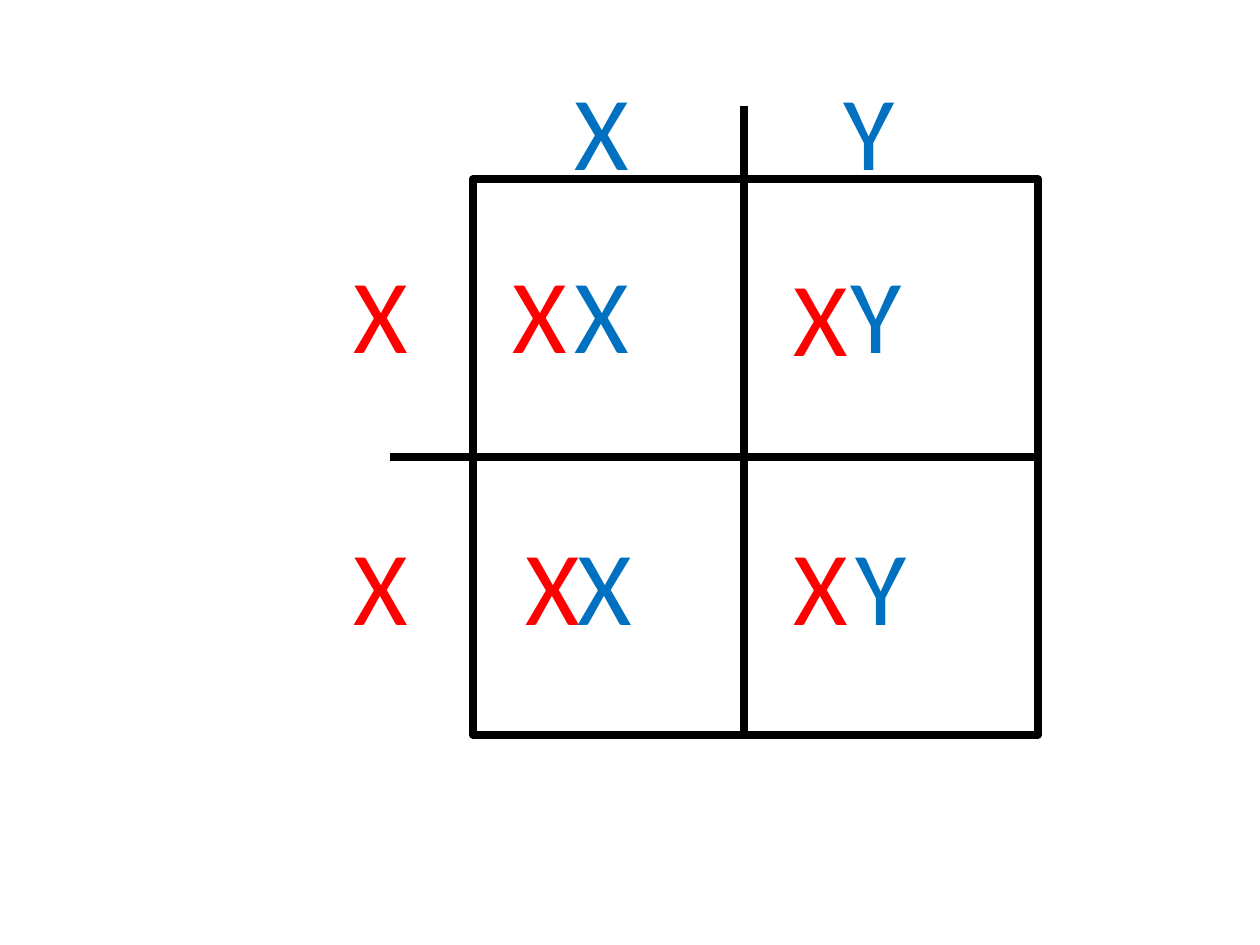
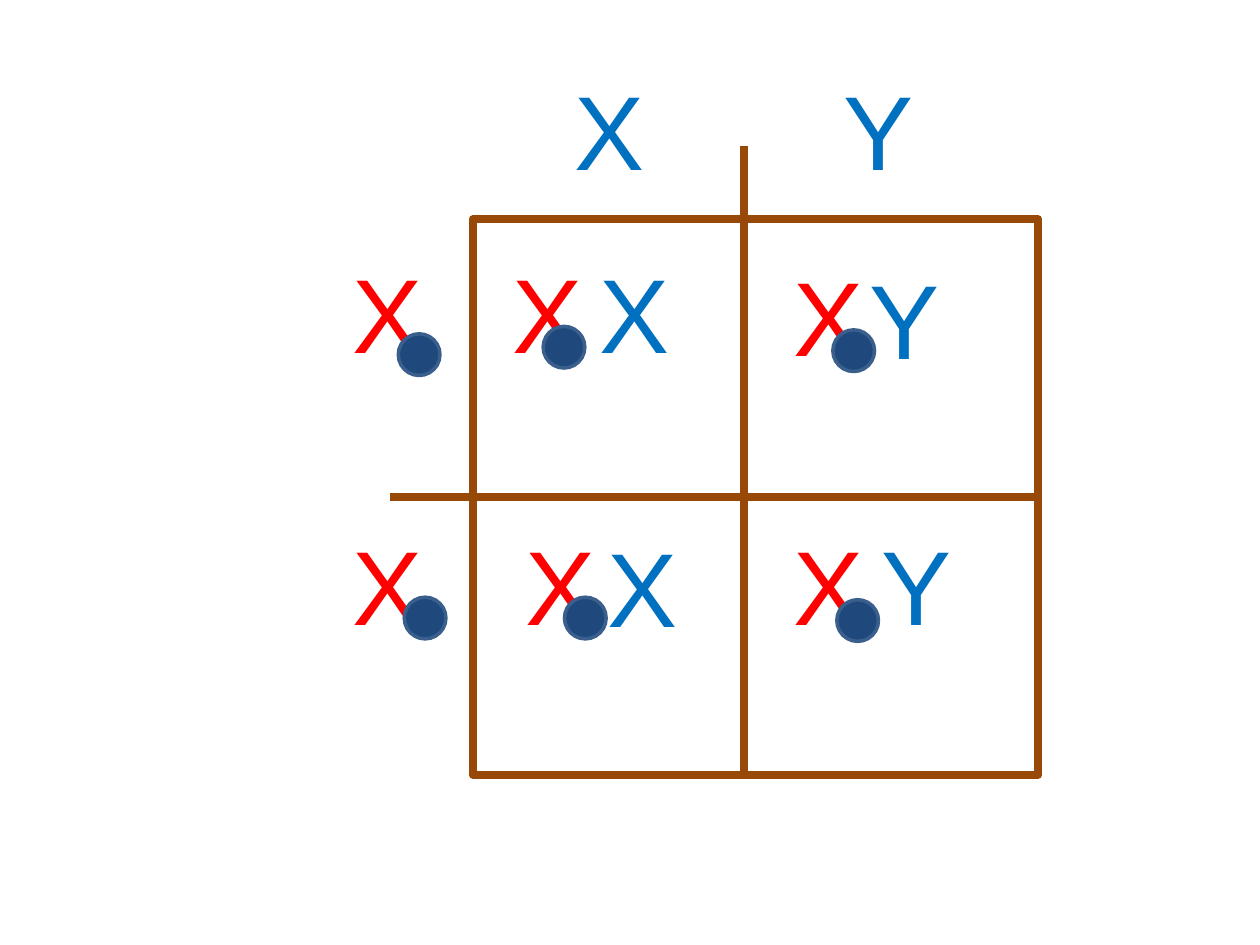
"""Build two Punnett squares of X and Y inheritance, the second with marked alleles."""

from lxml.etree import SubElement
from pptx import Presentation
from pptx.dml.color import RGBColor
from pptx.enum.shapes import MSO_CONNECTOR, MSO_SHAPE
from pptx.enum.text import MSO_AUTO_SIZE
from pptx.oxml.ns import qn
from pptx.util import Cm, Pt

COLOURS = {
    "mother": "FF0000",
    "father": "0070C0",
    "black": "000000",
    "brown": "984807",
    "dot": "1F497D",
    "dot_edge": "3A5F8C",
}

SQUARE_LEFT, SQUARE_WIDTH, SQUARE_HEIGHT = 9.53, 11.4, 11.2
DIVIDER_X, DIVIDER_RISE, DIVIDER_START = 14.99, 1.47, 7.87
LETTER_WIDTH, LETTER_HEIGHT = 2, 2.82
DOT_SIZE = 0.84
HEADER_Y, TOP_Y, BOTTOM_Y = 1.19, 4.88, 10.36

FATHER_HEADERS = [("X", 11.33, HEADER_Y), ("Y", 16.76, HEADER_Y)]
MOTHER_CELLS = [
    ("X", 10.34, BOTTOM_Y),
    ("X", 15.75, BOTTOM_Y),
    ("X", 10.08, TOP_Y),
    ("X", 15.75, 4.95),
]

SQUARES = [
    {
        "font": "Calibri",
        "frame": "black",
        "top": 3.61,
        "mother_x": 6.88,
        "father_cells": [
            ("X", 11.33, TOP_Y),
            ("X", 11.4, BOTTOM_Y),
            ("Y", 16.89, TOP_Y),
            ("Y", 16.99, BOTTOM_Y),
        ],
        "dots": [],
    },
    {
        "font": "Arial",
        "frame": "brown",
        "top": 4.42,
        "mother_x": 6.86,
        "father_cells": [
            ("X", 11.84, TOP_Y),
            ("X", 11.99, 10.41),
            ("Y", 17.27, 5),
            ("Y", 17.53, BOTTOM_Y),
        ],
        "dots": [
            (8.03, 6.73),
            (8.15, 12.04),
            (10.95, 6.58),
            (16.79, 6.65),
            (11.38, 12.04),
            (16.87, 12.09),
        ],
    },
]


def colour(name):
    return RGBColor.from_string(COLOURS[name])


def add_letter(page, letter, left, top, parent, font):
    box = page.shapes.add_textbox(Cm(left), Cm(top), Cm(LETTER_WIDTH), Cm(LETTER_HEIGHT))
    box.text_frame.word_wrap = True
    box.text_frame.auto_size = MSO_AUTO_SIZE.SHAPE_TO_FIT_TEXT
    span = box.text_frame.paragraphs[0].add_run()
    span.text = letter
    span.font.name = font
    span.font.size = Pt(60)
    span.font.color.rgb = colour(parent)


deck = Presentation()
deck.slide_width, deck.slide_height = Cm(25.4), Cm(19.05)

for square in SQUARES:
    page = deck.slides.add_slide(deck.slide_layouts[6])
    top = square["top"]
    right, bottom = SQUARE_LEFT + SQUARE_WIDTH, top + SQUARE_HEIGHT
    middle = top + SQUARE_HEIGHT / 2

    grid = page.shapes.add_group_shape()
    frame = grid.shapes.add_shape(
        MSO_SHAPE.RECTANGLE, Cm(SQUARE_LEFT), Cm(top), Cm(SQUARE_WIDTH), Cm(SQUARE_HEIGHT)
    )
    frame.shadow.inherit = False
    frame.fill.background()
    frame.line.color.rgb = colour(square["frame"])
    frame.line.width = Pt(4.5)
    SubElement(frame.line._get_or_add_ln(), qn("a:round"))

    for ends in [
        (DIVIDER_X, bottom, DIVIDER_X, top - DIVIDER_RISE),
        (right, middle, DIVIDER_START, middle),
    ]:
        divider = grid.shapes.add_connector(MSO_CONNECTOR.STRAIGHT, *map(Cm, ends))
        divider.line.color.rgb = colour(square["frame"])
        divider.line.width = Pt(4.5)
        SubElement(divider._element.spPr, qn("a:effectLst"))

    mother_headers = [("X", square["mother_x"], y) for y in (TOP_Y, BOTTOM_Y)]
    for parent, letters in [
        ("father", FATHER_HEADERS),
        ("mother", mother_headers + MOTHER_CELLS),
        ("father", square["father_cells"]),
    ]:
        for letter, x, y in letters:
            add_letter(page, letter, x, y, parent, square["font"])

    for x, y in square["dots"]:
        dot = page.shapes.add_shape(MSO_SHAPE.OVAL, Cm(x), Cm(y), Cm(DOT_SIZE), Cm(DOT_SIZE))
        dot.shadow.inherit = False
        dot.fill.solid()
        dot.fill.fore_color.rgb = colour("dot")
        dot.line.color.rgb = colour("dot_edge")
        dot.line.width = Pt(2)

deck.save("out.pptx")
